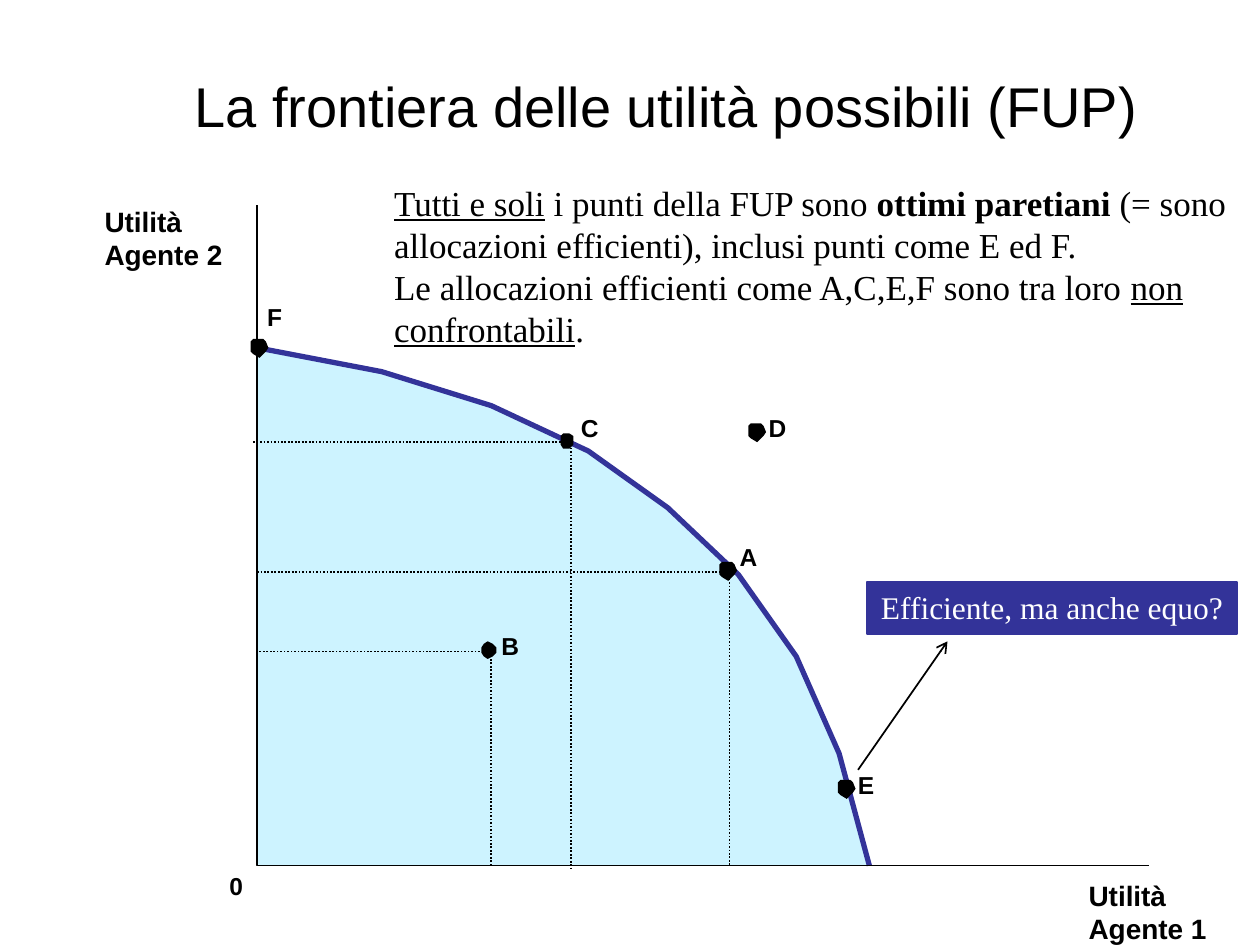
"""Build a slide on the utility possibility frontier."""
from lxml.etree import SubElement
from pptx import Presentation
from pptx.dml.color import RGBColor
from pptx.enum.dml import MSO_LINE
from pptx.enum.shapes import MSO_CONNECTOR as Connector, MSO_SHAPE as Shape
from pptx.enum.text import MSO_ANCHOR as Anchor, MSO_AUTO_SIZE as AutoSize, PP_ALIGN as Align
from pptx.oxml.ns import qn
from pptx.util import Pt

PX = 9144
BLACK, WHITE, INDIGO, SKY = "000000", "FFFFFF", "333399", "CDF3FF"
SANS, SERIF = "Arial", "Times New Roman"

TITLE = "La frontiera delle utilità possibili (FUP)"
ORIGIN = (204, 687)
AXES = [(204, 163), ORIGIN, (912, 687)]
FRONTIER = [(690, 687), (666, 598), (632, 521), (586, 456), (530, 403),
            (467, 358), (390, 322), (303, 295), (204, 276)]
GUIDES = [
    [(390, 687), (390, 517), (204, 517)],
    [(201, 351), (453, 351), (453, 690)],
    [(204, 454), (579, 454), (579, 687)],
]
LARGE = [(7, 15), (10, 12), (12, 10), (14, 7), (12, 2), (10, 0),
         (7, 0), (2, 0), (0, 2), (0, 7), (0, 10), (2, 12)]
DIAMOND = [(5, 14), (9, 12), (12, 9), (12, 5), (9, 2), (5, 0),
           (2, 2), (0, 5), (0, 9), (2, 12)]
NARROW = [(5, 12), (7, 12), (10, 9), (10, 2), (7, 0), (2, 0),
          (0, 2), (0, 9), (2, 12)]
DOTS = [(382, 509, DIAMOND), (445, 344, NARROW), (571, 446, LARGE),
        (594, 336, LARGE), (665, 619, LARGE), (199, 269, LARGE)]
POINT_LABELS = [("A", 587, 430), ("B", 398, 501), ("C", 461, 328), ("0", 182, 691),
                ("D", 610, 328), ("F", 212, 240), ("E", 681, 611)]
AXIS_LABELS = [(["Utilità", "Agente 2"], 83, 162), (["Utilità", "Agente 1"], 864, 697)]
NOTE = [
    [("Tutti e soli", "u"), (" i punti della FUP sono ", ""), ("ottimi paretiani ", "b"),
     ("(= sono allocazioni efficienti), inclusi punti come E ed F.", "")],
    [("Le allocazioni efficienti come A,C,E,F sono tra loro ", ""),
     ("non confrontabili", "u"), (".", "")],
]
CALLOUT = "Efficiente, ma anche equo?"


def color(value):
    return RGBColor.from_string(value)


def place(*lengths):
    return [length * PX for length in lengths]


def style_font(font, name, size, ink=BLACK, bold=False):
    font.name, font.size, font.bold = name, Pt(size), bold
    font.color.rgb = color(ink)


def style_line(line, ink, width):
    line.color.rgb = color(ink)
    line.width = Pt(width)


def add_outline(slide, points, fill=None, ink=None, width=1, dash=None):
    builder = slide.shapes.build_freeform(*points[0], scale=PX)
    builder.add_line_segments(points[1:], close=fill is not None)
    outline = builder.convert_to_shape()
    outline.shadow.inherit = False
    if fill:
        outline.fill.solid()
        outline.fill.fore_color.rgb = color(fill)
    else:
        outline.fill.background()
    if ink:
        style_line(outline.line, ink, width)
        outline.line.dash_style = dash
    else:
        outline.line.fill.background()


def add_label(slide, lines, area, size, wrap):
    frame = slide.shapes.add_textbox(*place(*area)).text_frame
    frame.margin_left = frame.margin_right = frame.margin_top = frame.margin_bottom = 0
    frame.word_wrap, frame.auto_size = wrap, AutoSize.SHAPE_TO_FIT_TEXT
    frame.text = "\n".join(lines)
    for para in frame.paragraphs:
        style_font(para.font, SANS, size, bold=True)


def add_title(slide):
    title = slide.shapes.title
    title.left, title.top, title.width, title.height = place(75, 21, 908, 125)
    title.text_frame.text = TITLE
    title.text_frame.vertical_anchor = Anchor.MIDDLE
    para = title.text_frame.paragraphs[0]
    para.alignment = Align.CENTER
    style_font(para.font, SANS, 32)


def add_note(slide):
    frame = slide.shapes.add_textbox(*place(303, 139, 697, 143)).text_frame
    frame.word_wrap, frame.auto_size = True, AutoSize.SHAPE_TO_FIT_TEXT
    for index, spans in enumerate(NOTE):
        para = frame.add_paragraph() if index else frame.paragraphs[0]
        style_font(para.font, SERIF, 20)
        for text, mark in spans:
            span = para.add_run()
            span.text = text
            span.font.bold, span.font.underline = mark == "b", mark == "u"


def add_callout(slide):
    box = slide.shapes.add_shape(Shape.RECTANGLE, *place(688, 462, 294, 41))
    box.shadow.inherit = False
    box.fill.solid()
    box.fill.fore_color.rgb = color(INDIGO)
    style_line(box.line, INDIGO, 1)
    frame = box.text_frame
    frame.word_wrap, frame.auto_size = False, AutoSize.SHAPE_TO_FIT_TEXT
    frame.vertical_anchor = Anchor.TOP
    frame.text = CALLOUT
    para = frame.paragraphs[0]
    para.alignment = Align.CENTER
    style_font(para.font, SERIF, 18, WHITE)

    arrow = slide.shapes.add_connector(Connector.STRAIGHT, *place(681, 611, 752, 509))
    style_line(arrow.line, BLACK, 1)
    SubElement(arrow.line._get_or_add_ln(), qn("a:tailEnd"), type="arrow")
    SubElement(arrow._element.spPr, qn("a:effectLst"))


def main():
    deck = Presentation()
    deck.slide_width, deck.slide_height = place(1000, 750)
    slide = deck.slides.add_slide(deck.slide_layouts[5])
    add_title(slide)
    add_outline(slide, FRONTIER + [ORIGIN], fill=SKY)
    add_outline(slide, FRONTIER, ink=INDIGO, width=3)
    add_outline(slide, AXES, ink=BLACK)
    for guide in GUIDES:
        add_outline(slide, guide, ink=BLACK, dash=MSO_LINE.ROUND_DOT)
    for left, top, corners in DOTS:
        add_outline(slide, [(left + x, top + y) for x, y in corners], fill=BLACK)
    for text, left, top in POINT_LABELS:
        add_label(slide, [text], (left, top, 14, 23), 14, False)
    for lines, left, top in AXIS_LABELS:
        add_label(slide, lines, (left, top, 136, 53), 16, True)
    add_note(slide)
    add_callout(slide)
    deck.save("out.pptx")


if __name__ == "__main__":
    main()
